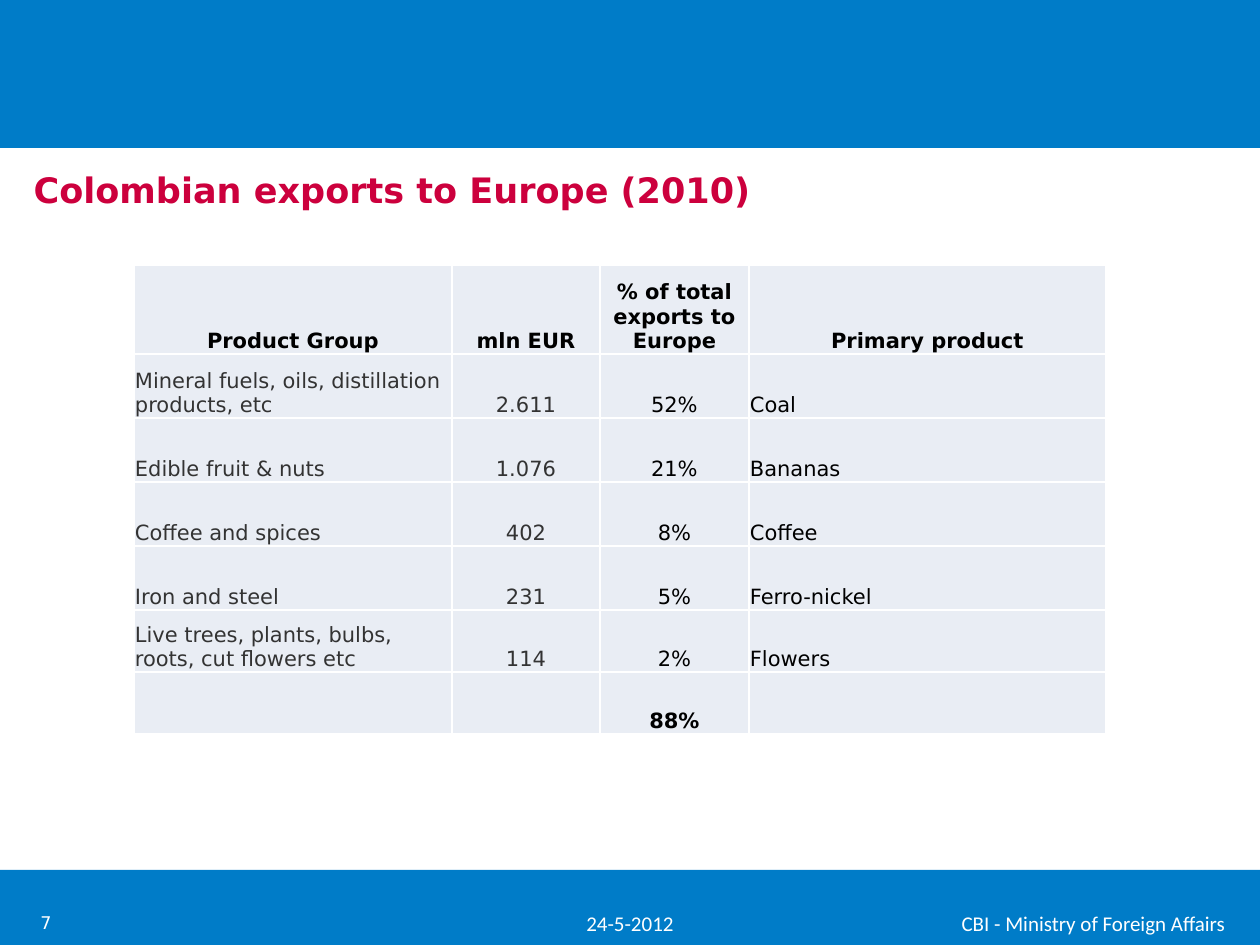
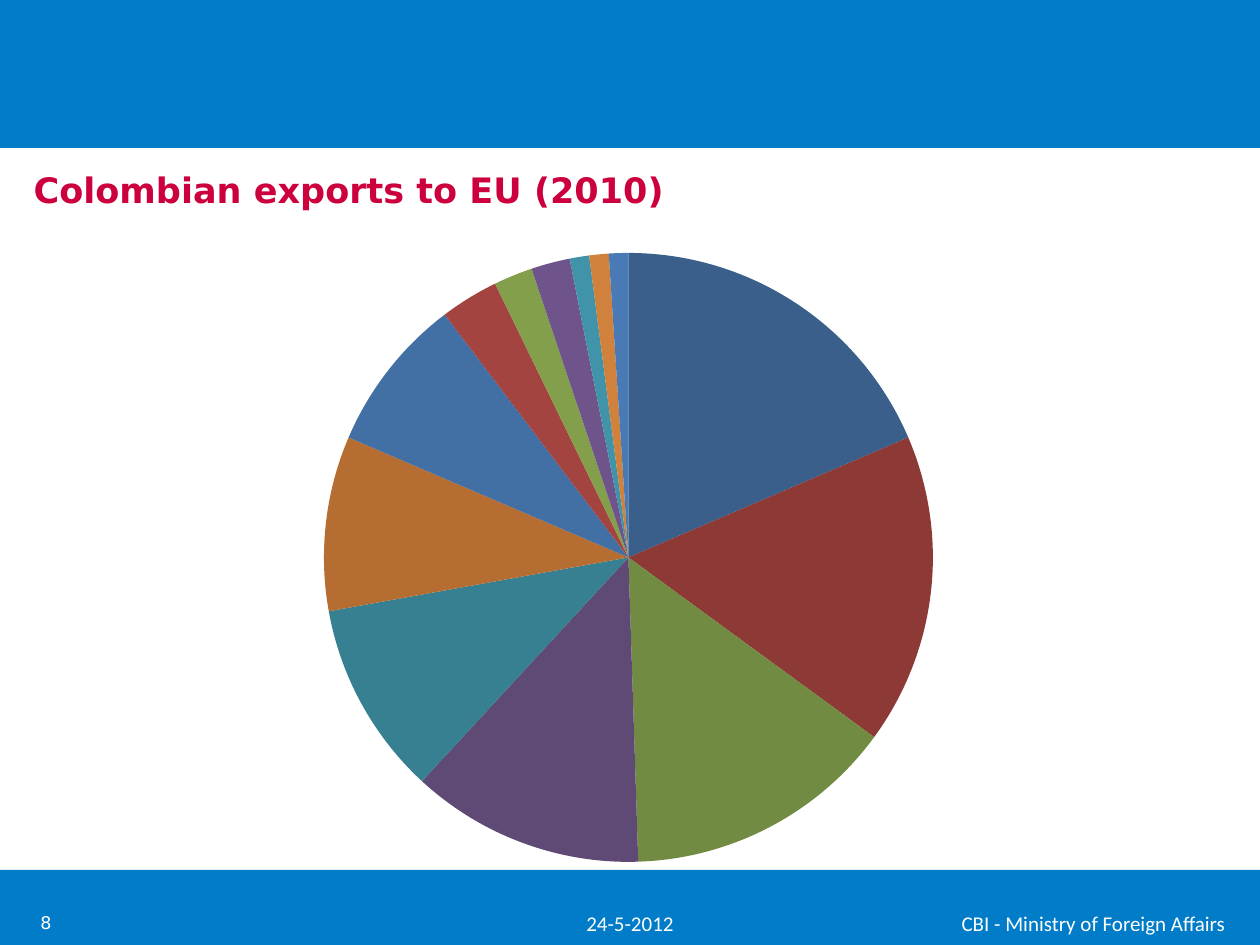
from lxml.etree import SubElement
from pptx import Presentation
from pptx.chart.data import CategoryChartData
from pptx.dml.color import RGBColor
from pptx.enum.chart import XL_CHART_TYPE
from pptx.enum.shapes import MSO_SHAPE
from pptx.enum.text import MSO_ANCHOR, MSO_AUTO_SIZE, PP_ALIGN
from pptx.oxml import parse_xml
from pptx.oxml.ns import nsdecls, qn
from pptx.util import Pt

EMU_PER_PX = 914400 / 126
SLIDE_WIDTH, SLIDE_HEIGHT = 1260, 945

BLUE = RGBColor(0x00, 0x7C, 0xC8)
CRIMSON = RGBColor(0xCC, 0x00, 0x3D)
WHITE = RGBColor(0xFF, 0xFF, 0xFF)
BLACK = RGBColor(0x00, 0x00, 0x00)
DARK_GREY = RGBColor(0x33, 0x33, 0x33)
CELL_GREY = RGBColor(0xE9, 0xED, 0xF4)
SLICE_COLOURS = [RGBColor.from_string(code) for code in (
    "3A5F8B", "8D3A37", "728B42", "5E4A75", "378092", "B66D31", "426FA4",
    "A34441", "849F4C", "6E548A", "4093A9", "D0813B", "4A7AB5")]

BODY_FONT, FOOTER_FONT = "DejaVu Sans", "Calibri"
TITLE_STYLE = {"name": BODY_FONT, "size": Pt(20), "bold": True}
FOOTER_STYLE = {"name": FOOTER_FONT, "size": Pt(12), "bold": False}
NUMBER_STYLE = {"name": BODY_FONT, "size": Pt(10), "bold": False}
CELL_STYLE = {"name": BODY_FONT, "size": Pt(12), "bold": False}
HEADING_STYLE = CELL_STYLE | {"bold": True}

# Left, top, width, height
BANDS = [(0, 870, SLIDE_WIDTH, 75), (0, 0, SLIDE_WIDTH, 148), (0, 900, SLIDE_WIDTH, 45)]
TITLE_BOX = (21, 145, 1213, 90)
DATE_BOX = (0, 898, SLIDE_WIDTH, 50)
OWNER_BOX = (927, 898, 333, 50)
NUMBER_BOX = (0, 898, 64, 50)
CHART_BOX = (21, 236, 1213, 644)
PIE_BOX = (324, 253, 609, 609)

# Export table
TABLE_LEFT, TABLE_TOP = 134, 265
COLUMN_WIDTHS = [318, 148, 149, 357]
ROW_HEIGHTS = [89, 64, 64, 64, 64, 62, 62]
COLUMN_COLOURS = [DARK_GREY, DARK_GREY, BLACK, BLACK]
COLUMN_ALIGNMENTS = [PP_ALIGN.LEFT, PP_ALIGN.CENTER, PP_ALIGN.CENTER, PP_ALIGN.LEFT]
EXPORT_ROWS = [
    ("Product Group", "mln EUR", "% of total exports to Europe", "Primary product"),
    ("Mineral fuels, oils, distillation products, etc", "2.611", "52%", "Coal"),
    ("Edible fruit & nuts", "1.076", "21%", "Bananas"),
    ("Coffee and spices", "402", "8%", "Coffee"),
    ("Iron and steel", "231", "5%", "Ferro-nickel"),
    ("Live trees, plants, bulbs, roots, cut flowers etc", "114", "2%", "Flowers"),
    ("", "", "88%", ""),
]

# Pie chart: the last categories round to zero
CATEGORY_COUNT = 31
LARGEST_SHARES = [18, 16, 14, 12, 10, 9, 8, 3, 2, 2, 1, 1, 1]
SHARES = LARGEST_SHARES + [0] * (CATEGORY_COUNT - len(LARGEST_SHARES))


def px(length):
    return round(length * EMU_PER_PX)


def place(box):
    return [px(length) for length in box]


def apply_formats(target, formats):
    for attribute, value in formats.items():
        setattr(target, attribute, value)


def write_text(text_frame, text, style, colour, alignment):
    paragraph = text_frame.paragraphs[0]
    paragraph.alignment = alignment
    if text:
        run = paragraph.add_run()
        run.text = text
        apply_formats(run.font, style)
        run.font.color.rgb = colour


def add_band(slide, box):
    band = slide.shapes.add_shape(MSO_SHAPE.RECTANGLE, *place(box))
    band.shadow.inherit = False
    band.fill.solid()
    band.fill.fore_color.rgb = BLUE
    band.line.fill.background()


def add_footer_text(slide, text, box, style, alignment):
    text_frame = slide.shapes.add_textbox(*place(box)).text_frame
    apply_formats(text_frame, {"word_wrap": True, "vertical_anchor": MSO_ANCHOR.MIDDLE})
    write_text(text_frame, text, style, WHITE, alignment)


def set_title(slide, text):
    title = slide.shapes.title
    apply_formats(title, dict(zip(("left", "top", "width", "height"), place(TITLE_BOX))))
    apply_formats(title.text_frame, {
        "word_wrap": True,
        "auto_size": MSO_AUTO_SIZE.NONE,
        "vertical_anchor": MSO_ANCHOR.MIDDLE,
    })
    write_text(title.text_frame, text, TITLE_STYLE, CRIMSON, PP_ALIGN.LEFT)


def add_slide(presentation, title, number):
    slide = presentation.slides.add_slide(presentation.slide_layouts.get_by_name("Title Only"))
    for box in BANDS:
        add_band(slide, box)
    set_title(slide, title)
    add_footer_text(slide, "24-5-2012", DATE_BOX, FOOTER_STYLE, PP_ALIGN.CENTER)
    add_footer_text(slide, "CBI - Ministry of Foreign Affairs", OWNER_BOX,
                    FOOTER_STYLE, PP_ALIGN.CENTER)
    add_footer_text(slide, str(number), NUMBER_BOX, NUMBER_STYLE, PP_ALIGN.RIGHT)
    return slide


def format_cell(cell):
    apply_formats(cell, {
        "margin_left": px(1), "margin_right": px(1), "margin_top": px(1),
        "margin_bottom": 0, "vertical_anchor": MSO_ANCHOR.BOTTOM,
    })
    # Borders come before the fill in the cell properties
    properties = cell._tc.get_or_add_tcPr()
    for side in ("lnL", "lnR", "lnT", "lnB"):
        border = SubElement(properties, qn(f"a:{side}"), w=str(Pt(1)))
        fill = SubElement(border, qn("a:solidFill"))
        SubElement(fill, qn("a:srgbClr"), val=str(WHITE))
    cell.fill.solid()
    cell.fill.fore_color.rgb = CELL_GREY


def add_export_table(slide):
    box = (TABLE_LEFT, TABLE_TOP, sum(COLUMN_WIDTHS), sum(ROW_HEIGHTS))
    table = slide.shapes.add_table(len(ROW_HEIGHTS), len(COLUMN_WIDTHS), *place(box)).table
    apply_formats(table, {"first_row": False, "horz_banding": False})
    for column, width in zip(table.columns, COLUMN_WIDTHS):
        column.width = px(width)
    last_row = len(EXPORT_ROWS) - 1
    for row_index, (height, texts) in enumerate(zip(ROW_HEIGHTS, EXPORT_ROWS)):
        table.rows[row_index].height = px(height)
        style = HEADING_STYLE if row_index in (0, last_row) else CELL_STYLE
        for column_index, text in enumerate(texts):
            cell = table.cell(row_index, column_index)
            format_cell(cell)
            heading = row_index == 0
            colour = BLACK if heading else COLUMN_COLOURS[column_index]
            alignment = PP_ALIGN.CENTER if heading else COLUMN_ALIGNMENTS[column_index]
            write_text(cell.text_frame, text, style, colour, alignment)


def set_plot_layout(chart, plot_box, chart_box):
    left, top, width, height = chart_box
    fractions = {
        "x": (plot_box[0] - left) / width, "y": (plot_box[1] - top) / height,
        "w": plot_box[2] / width, "h": plot_box[3] / height,
    }
    values = "".join(f'<c:{key} val="{value:.4f}"/>' for key, value in fractions.items())
    layout = parse_xml(
        f'<c:layout {nsdecls("c")}><c:manualLayout><c:layoutTarget val="inner"/>'
        f'<c:xMode val="edge"/><c:yMode val="edge"/>{values}</c:manualLayout></c:layout>')
    plot_area = chart._chartSpace.chart.plotArea
    for old_layout in plot_area.findall(qn("c:layout")):
        plot_area.remove(old_layout)
    plot_area.insert(0, layout)


def add_share_pie(slide):
    chart_data = CategoryChartData()
    chart_data.categories = [str(number) for number in range(1, CATEGORY_COUNT + 1)]
    chart_data.add_series("Series 1", SHARES)
    chart = slide.shapes.add_chart(XL_CHART_TYPE.PIE, *place(CHART_BOX), chart_data).chart
    apply_formats(chart, {"has_legend": False, "has_title": False})
    apply_formats(chart.font, {"name": FOOTER_FONT, "size": Pt(10)})
    chart.font.color.rgb = BLACK
    plot = chart.plots[0]
    plot.vary_by_categories = True
    for index, colour in enumerate(SLICE_COLOURS):
        fill = plot.series[0].points[index].format.fill
        fill.solid()
        fill.fore_color.rgb = colour
    set_plot_layout(chart, PIE_BOX, CHART_BOX)


def main():
    presentation = Presentation()
    apply_formats(presentation, {
        "slide_width": px(SLIDE_WIDTH), "slide_height": px(SLIDE_HEIGHT)})

    # Exports by product group
    add_export_table(add_slide(presentation, "Colombian exports to Europe (2010)", 7))

    # Shares of exports
    add_share_pie(add_slide(presentation, "Colombian exports to EU (2010)", 8))

    presentation.save("out.pptx")


if __name__ == "__main__":
    main()
